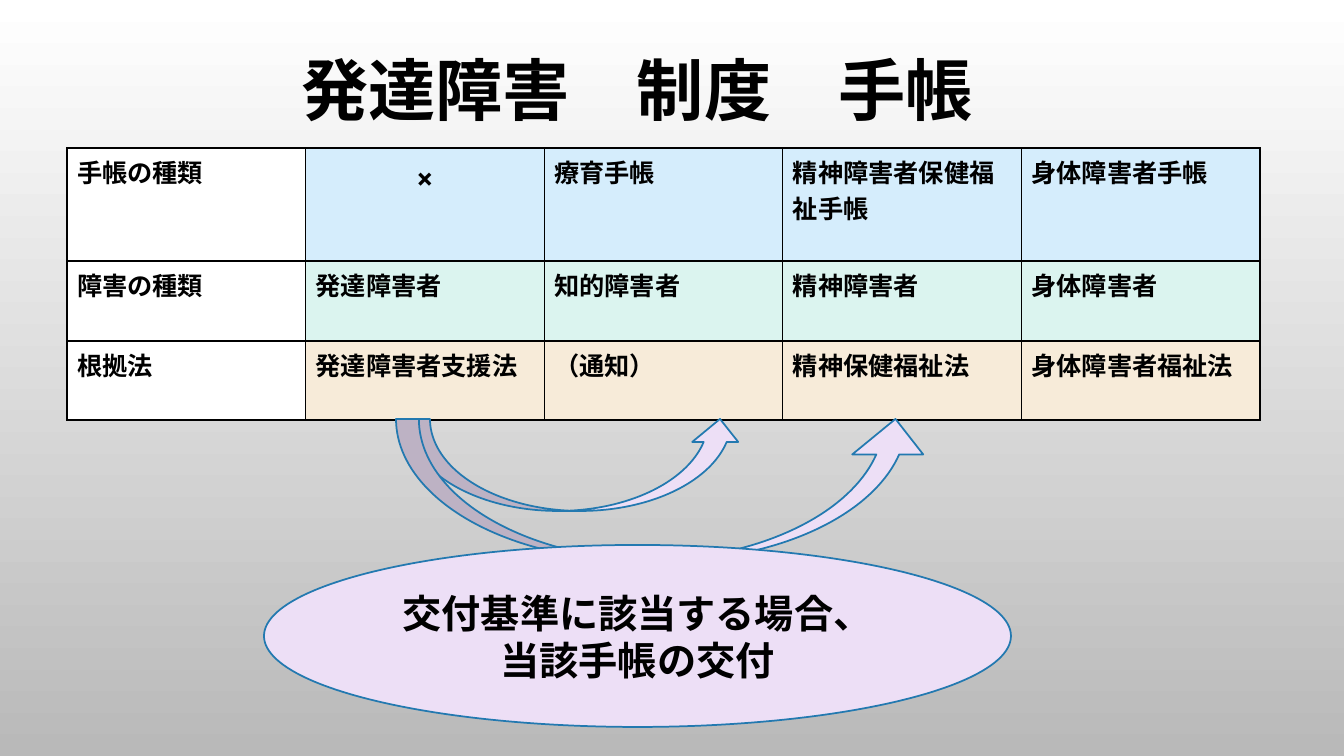
import pptx
import pptx.util
import pptx.dml.color
import pptx.enum.lang
import pptx.enum.shapes
import pptx.enum.text
import pptx.oxml

THEME = {
    "font": "Cabin", "title": 48, "note": 28, "cross": 28, "cell": 18,
    "ink": "000000", "bg_top": "FFFFFF", "bg_bottom": "B9B9B9",
    "label": "FFFFFF", "rows": ["D5EDFC", "DBF4EF", "F7EBD9"],
    "lilac": "EDDFF6", "outline": "2379B0",
}
PX = 914400 / 100.8
RGB = pptx.dml.color.RGBColor.from_string
SHAPE = pptx.enum.shapes.MSO_SHAPE
ALIGN = pptx.enum.text.PP_ALIGN
MIDDLE = pptx.enum.text.MSO_ANCHOR.MIDDLE


def px(*lengths):
    return [pptx.util.Emu(round(n * PX)) for n in lengths]


def write(tf, text, size, align=ALIGN.LEFT, spacing=None):
    p = tf.paragraphs[0]
    p.alignment = align
    p.line_spacing = spacing
    r = p.add_run()
    r.text = text
    r.font.name = THEME["font"]
    r.font.size = pptx.util.Pt(size)
    r.font.bold = True
    r.font.color.rgb = RGB(THEME["ink"])
    r.font.language_id = pptx.enum.lang.MSO_LANGUAGE_ID.JAPANESE


prs = pptx.Presentation()
prs.slide_width, prs.slide_height = px(1344, 756)
s = prs.slides.add_slide(prs.slide_layouts[5])

# Background, fading from top to bottom
bg = s.background.fill
bg.gradient()
bg.gradient_angle = 270
for stop, color in zip(bg.gradient_stops, (THEME["bg_top"], THEME["bg_bottom"])):
    stop.color.rgb = RGB(color)

# Title
title = s.shapes.title
title.left, title.top, title.width, title.height = px(51, 32, 1172, 124)
title.text_frame.vertical_anchor = MIDDLE
write(title.text_frame, "発達障害　制度　手帳", THEME["title"], align=ALIGN.CENTER, spacing=0.9)

# Table of handbooks, disabilities and laws
rows = [
    ["手帳の種類", "×", "療育手帳", "精神障害者保健福祉手帳", "身体障害者手帳"],
    ["障害の種類", "発達障害者", "知的障害者", "精神障害者", "身体障害者"],
    ["根拠法", "発達障害者支援法", "（通知）", "精神保健福祉法", "身体障害者福祉法"],
]
heights = px(113, 80, 79)
table = s.shapes.add_table(3, 5, *px(67, 148, 1193, 272)).table
table.first_row = table.horz_banding = False
for i, texts in enumerate(rows):
    table.rows[i].height = heights[i]
    for j, text in enumerate(texts):
        cell = table.cell(i, j)
        cross = text == "×"
        write(cell.text_frame, text, THEME["cross" if cross else "cell"],
              align=ALIGN.CENTER if cross else ALIGN.LEFT)
        tcPr = cell._tc.get_or_add_tcPr()
        for side in ("lnL", "lnR", "lnT", "lnB"):
            tcPr.append(pptx.oxml.parse_xml(
                f'<a:{side} xmlns:a="http://schemas.openxmlformats.org/drawingml/2006/main" w="12700">'
                f'<a:solidFill><a:srgbClr val="{THEME["ink"]}"/></a:solidFill></a:{side}>'))
        cell.fill.solid()
        cell.fill.fore_color.rgb = RGB(THEME["rows"][i] if j else THEME["label"])

# Curved arrows, then the ellipse over them
shapes = [
    (SHAPE.CURVED_UP_ARROW, (407, 419, 336, 92), (0.25, 0.5, 0.25), ""),
    (SHAPE.CURVED_UP_ARROW, (396, 419, 535, 142), (0.161, 0.5, 0.25), ""),
    (SHAPE.OVAL, (264, 545, 747, 182), (), "交付基準に該当する場合、当該手帳の交付"),
]
for kind, box, adjustments, text in shapes:
    sp = s.shapes.add_shape(kind, *px(*box))
    sp.shadow.inherit = False
    sp.fill.solid()
    sp.fill.fore_color.rgb = RGB(THEME["lilac"])
    sp.line.color.rgb = RGB(THEME["outline"])
    sp.line.width = pptx.util.Pt(1.25)
    for k, value in enumerate(adjustments):
        sp.adjustments[k] = value
    if text:
        tf = sp.text_frame
        tf.word_wrap = True
        tf.vertical_anchor = MIDDLE
        tf.margin_left, tf.margin_right = px(14, 14)
        write(tf, text, THEME["note"], align=ALIGN.CENTER)

prs.save("out.pptx")
